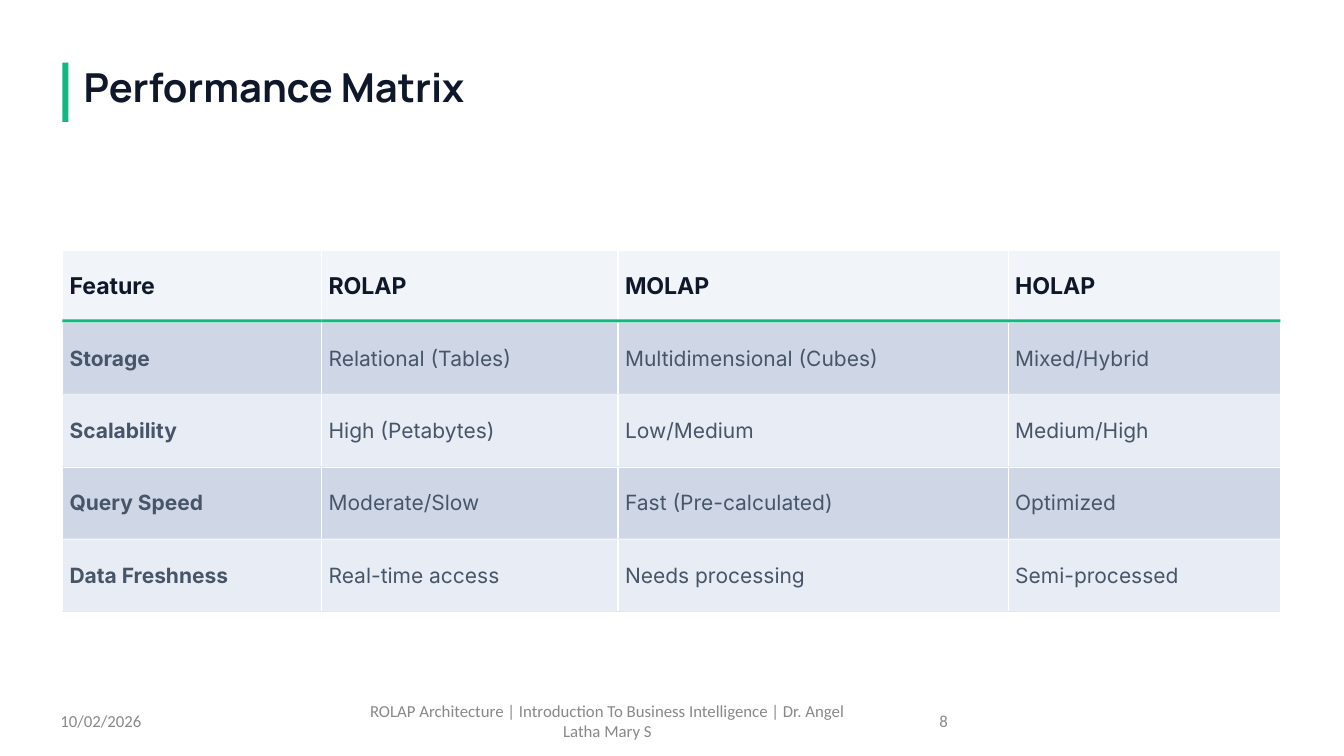
from itertools import accumulate

from pptx import Presentation
from pptx import util as u
from pptx.dml.color import RGBColor
from pptx.enum import shapes, text

COLOURS = {
    "ink": "0F172A",
    "body": "475569",
    "footer": "888888",
    "accent": "10B981",
    "rule": "E2E8F0",
    "header": "F1F5F9",
    "band_dark": "CFD7E7",
    "band_light": "E8ECF4",
}
LEFT = 0.62
TABLE_TOP = 2.48
ROW_HEIGHT = 0.718
COLUMN_WIDTHS = [2.57, 2.94, 3.87, 2.7]
MATRIX = [
    ["Feature", "ROLAP", "MOLAP", "HOLAP"],
    ["Storage", "Relational (Tables)", "Multidimensional (Cubes)", "Mixed/Hybrid"],
    ["Scalability", "High (Petabytes)", "Low/Medium", "Medium/High"],
    ["Query Speed", "Moderate/Slow", "Fast (Pre-calculated)", "Optimized"],
    ["Data Freshness", "Real-time access", "Needs processing", "Semi-processed"],
]
FOOTERS = [
    (0.5, 2.33, "10/02/2026", text.PP_ALIGN.LEFT),
    (3.42, 5.21, "ROLAP Architecture | Introduction To Business Intelligence | "
                 "Dr. Angel Latha Mary S", text.PP_ALIGN.CENTER),
    (7.17, 2.33, "8", text.PP_ALIGN.RIGHT),
]


def colour(name):
    return RGBColor.from_string(COLOURS[name])


class SlideBuilder:
    """Holds the fonts and the slide being built."""

    heading_font = "Manrope"
    table_font = "Inter"
    footer_font = "Calibri"

    def __init__(self, slide):
        self.slide = slide

    def add_run(self, paragraph, words, font, size, ink, bold=False):
        run = paragraph.add_run()
        run.text = words
        run.font.name = font
        run.font.size = u.Pt(size)
        run.font.bold = bold
        run.font.color.rgb = colour(ink)

    def title(self, left, top, width, height, words):
        shape = self.slide.shapes.title
        shape.left, shape.top = u.Inches(left), u.Inches(top)
        shape.width, shape.height = u.Inches(width), u.Inches(height)
        frame = shape.text_frame
        frame.margin_left = frame.margin_right = 0
        frame.margin_top = frame.margin_bottom = 0
        frame.vertical_anchor = text.MSO_ANCHOR.TOP
        frame.word_wrap = True
        frame.auto_size = text.MSO_AUTO_SIZE.SHAPE_TO_FIT_TEXT
        paragraph = frame.paragraphs[0]
        paragraph.alignment = text.PP_ALIGN.LEFT
        self.add_run(paragraph, words, self.heading_font, 28.5, "ink", True)

    def bar(self, left, top, width, height, fill):
        shape = self.slide.shapes.add_shape(
            shapes.MSO_SHAPE.RECTANGLE,
            u.Inches(left), u.Inches(top), u.Inches(width), u.Inches(height))
        shape.shadow.inherit = False
        shape.fill.solid()
        shape.fill.fore_color.rgb = colour(fill)
        shape.line.fill.background()

    def footer(self, left, width, words, alignment):
        box = self.slide.shapes.add_textbox(
            u.Inches(left), u.Inches(6.95), u.Inches(width), u.Inches(0.4))
        frame = box.text_frame
        frame.word_wrap = True
        frame.vertical_anchor = text.MSO_ANCHOR.MIDDLE
        paragraph = frame.paragraphs[0]
        paragraph.alignment = alignment
        self.add_run(paragraph, words, self.footer_font, 12, "footer")

    def table(self, left, top, widths, row_height, rows):
        table = self.slide.shapes.add_table(
            len(rows), len(widths), u.Inches(left), u.Inches(top),
            u.Inches(sum(widths)), u.Inches(row_height * len(rows))).table
        for column, width in zip(table.columns, widths):
            column.width = u.Inches(width)
        for row_index, row in enumerate(rows):
            table.rows[row_index].height = u.Inches(row_height)
            for column_index, words in enumerate(row):
                self.cell(table.cell(row_index, column_index), words,
                          row_index, column_index)

    def cell(self, cell, words, row_index, column_index):
        is_header = row_index == 0
        band = "band_dark" if row_index % 2 else "band_light"
        cell.fill.solid()
        cell.fill.fore_color.rgb = colour("header" if is_header else band)
        cell.vertical_anchor = text.MSO_ANCHOR.MIDDLE
        cell.margin_left = cell.margin_right = u.Inches(0.07)
        cell.margin_top = cell.margin_bottom = u.Inches(0.03)
        self.add_run(cell.text_frame.paragraphs[0], words, self.table_font,
                     16.5 if is_header else 15, "ink" if is_header else "body",
                     is_header or column_index == 0)

    def row_rules(self, left, top, widths, row_height, row_count):
        """Underlines every cell: a thick accent below the header, thin below the rest."""
        lefts = accumulate(widths[:-1], initial=left)
        columns = list(zip(lefts, widths))
        for row_number in range(1, row_count + 1):
            thickness, fill = (0.03, "accent") if row_number == 1 else (0.01, "rule")
            rule_top = top + row_number * row_height - thickness
            for column_left, width in columns:
                self.bar(column_left, rule_top, width, thickness, fill)


def main():
    presentation = Presentation()
    presentation.slide_width = u.Inches(13.33)
    presentation.slide_height = u.Inches(7.5)
    slide = presentation.slides.add_slide(presentation.slide_layouts[5])
    builder = SlideBuilder(slide)
    builder.table(LEFT, TABLE_TOP, COLUMN_WIDTHS, ROW_HEIGHT, MATRIX)
    builder.row_rules(LEFT, TABLE_TOP, COLUMN_WIDTHS, ROW_HEIGHT, len(MATRIX))
    builder.title(0.83, 0.62, 12.47, 0.59, "Performance Matrix")
    builder.bar(LEFT, 0.62, 0.06, 0.59, "accent")
    for footer in FOOTERS:
        builder.footer(*footer)
    presentation.save("out.pptx")


if __name__ == "__main__":
    main()
